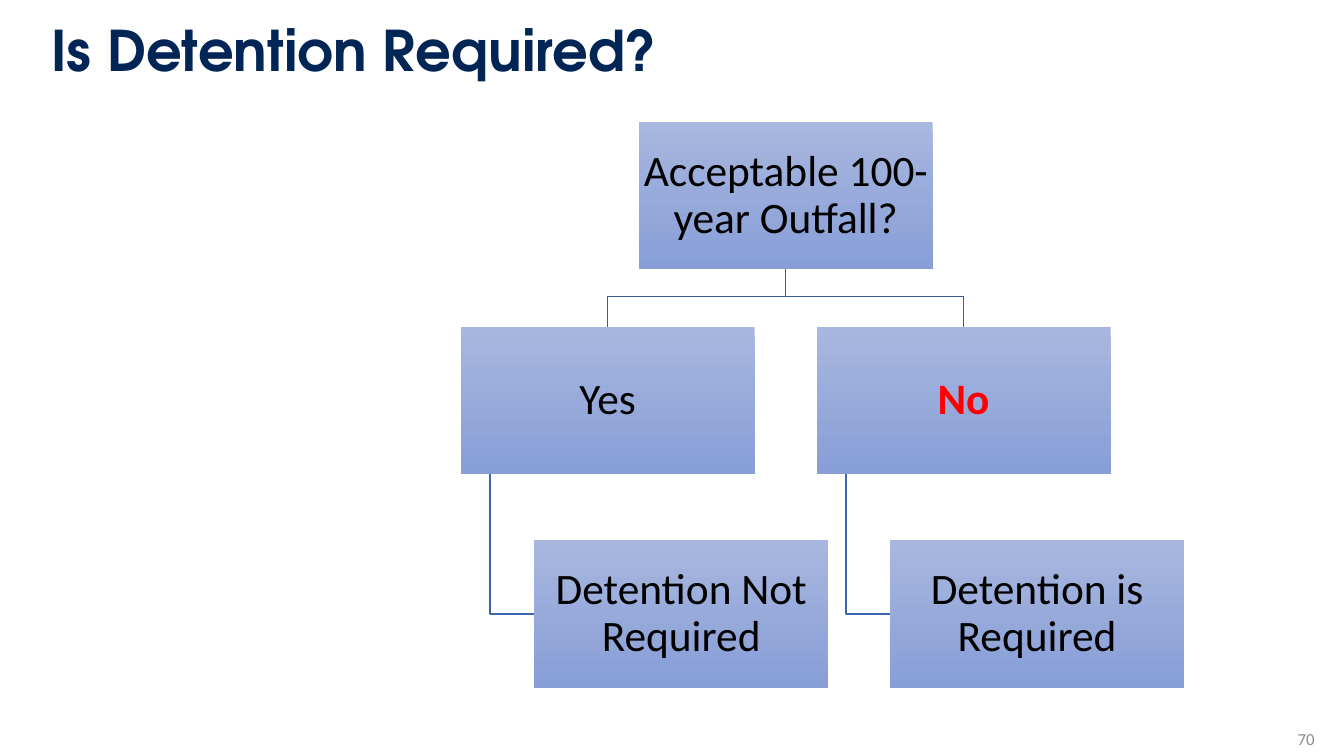
from dataclasses import dataclass

from pptx import Presentation
from pptx.dml.color import RGBColor as RGB
from pptx.enum.shapes import MSO_SHAPE as Shape
from pptx.enum.text import MSO_ANCHOR as Anchor, PP_ALIGN as Align
from pptx.util import Cm, Pt


@dataclass(frozen=True)
class Theme:
    """Colours, fonts and type sizes of the slide."""
    title: RGB = RGB(0x01, 0x25, 0x55)
    text: RGB = RGB(0, 0, 0)
    alert: RGB = RGB(0xFF, 0, 0)
    muted: RGB = RGB(0x8C, 0x8C, 0x8C)
    box_top: RGB = RGB(0xA8, 0xB7, 0xDF)
    box_bottom: RGB = RGB(0x88, 0x9E, 0xD7)
    branch: RGB = RGB(0x36, 0x5B, 0x9D)
    leaf_line: RGB = RGB(0x3E, 0x67, 0xB2)
    title_font: str = "TeX Gyre Adventor"
    body_font: str = "Calibri"
    title_size: int = 40
    box_size: int = 31
    number_size: int = 12


@dataclass(frozen=True)
class Box:
    """A rectangle in centimetres."""
    x: float
    y: float
    w: float
    h: float

    @property
    def cx(self):
        """Horizontal centre."""
        return self.x + self.w / 2

    @property
    def cy(self):
        """Vertical centre."""
        return self.y + self.h / 2

    @property
    def bottom(self):
        """Lower edge."""
        return self.y + self.h

    def emu(self):
        """Left, top, width and height as lengths."""
        return [Cm(v) for v in (self.x, self.y, self.w, self.h)]


THEME = Theme()


def write(sp, text, size, color, font, bold=False, align=Align.LEFT,
          anchor=Anchor.TOP, spacing=0.9):
    """Put one formatted paragraph in a shape."""
    tf = sp.text_frame
    tf.word_wrap = True
    tf.vertical_anchor = anchor
    tf.text = text
    p = tf.paragraphs[0]
    p.alignment = align
    p.line_spacing = spacing
    f = p.runs[0].font
    f.name, f.size, f.bold = font, Pt(size), bold
    f.color.rgb = color


def add_title(s, box, text):
    """Place the slide title."""
    write(s.shapes.add_textbox(*box.emu()), text, THEME.title_size,
          THEME.title, THEME.title_font, bold=True)


def add_number(s, box, text):
    """Place the slide number."""
    write(s.shapes.add_textbox(*box.emu()), text, THEME.number_size,
          THEME.muted, THEME.body_font, align=Align.RIGHT,
          anchor=Anchor.MIDDLE, spacing=1.0)


def add_node(s, box, text, color=THEME.text, bold=False):
    """Place one gradient box of the decision tree."""
    sp = s.shapes.add_shape(Shape.RECTANGLE, *box.emu())
    sp.shadow.inherit = False
    sp.line.fill.background()
    sp.fill.gradient()
    sp.fill.gradient_angle = 270
    for stop, rgb in zip(sp.fill.gradient_stops,
                         (THEME.box_top, THEME.box_bottom)):
        stop.color.rgb = rgb
    tf = sp.text_frame
    tf.margin_left = tf.margin_right = Cm(0.05)
    tf.margin_top = tf.margin_bottom = Cm(0.05)
    write(sp, text, THEME.box_size, color, THEME.body_font, bold,
          Align.CENTER, Anchor.MIDDLE)


def add_elbow(s, points, color):
    """Draw an open line with right-angled bends."""
    start, *rest = [(Cm(x), Cm(y)) for x, y in points]
    fb = s.shapes.build_freeform(*start)
    fb.add_line_segments(rest, close=False)
    sp = fb.convert_to_shape()
    sp.shadow.inherit = False
    sp.fill.background()
    sp.line.color.rgb = color
    sp.line.width = Pt(1)


def add_tree(s, area, question, answers):
    """Draw a question, its answers and their outcomes within the area."""
    w, h = 7.41, 3.71
    indent = w / 4
    step = area.w - w - indent
    answer_y = area.y + 5.16
    outcome_y = area.bottom - h
    root = Box(area.x + step / 2, area.y, w, h)
    bus_y = answer_y - 0.77
    nodes = [(root, question)]
    for i, (answer, outcome, *style) in enumerate(answers):
        top = Box(area.x + i * step, answer_y, w, h)
        leaf = Box(top.x + indent, outcome_y, w, h)
        stem_x = top.x + w / 10
        add_elbow(s, [(root.cx, root.bottom), (root.cx, bus_y),
                      (top.cx, bus_y), (top.cx, top.y)], THEME.branch)
        add_elbow(s, [(stem_x, top.bottom), (stem_x, leaf.cy),
                      (leaf.x, leaf.cy)], THEME.leaf_line)
        nodes += [(top, answer, *style), (leaf, outcome)]
    for node in nodes:
        add_node(s, *node)


def main():
    """Build and save the slide."""
    prs = Presentation()
    prs.slide_width, prs.slide_height = Cm(33.87), Cm(19.05)
    s = prs.slides.add_slide(prs.slide_layouts[6])
    add_number(s, Box(25.76, 18.11, 7.62, 1.02), "70")
    add_tree(s, Box(11.61, 3.08, 18.23, 14.25), "Acceptable 100-year Outfall?", [
        ("Yes", "Detention Not Required"),
        ("No", "Detention is Required", THEME.alert, True),
    ])
    add_title(s, Box(1.04, 0.46, 26.14, 2.21), "Is Detention Required?")
    prs.save("out.pptx")


if __name__ == "__main__":
    main()
